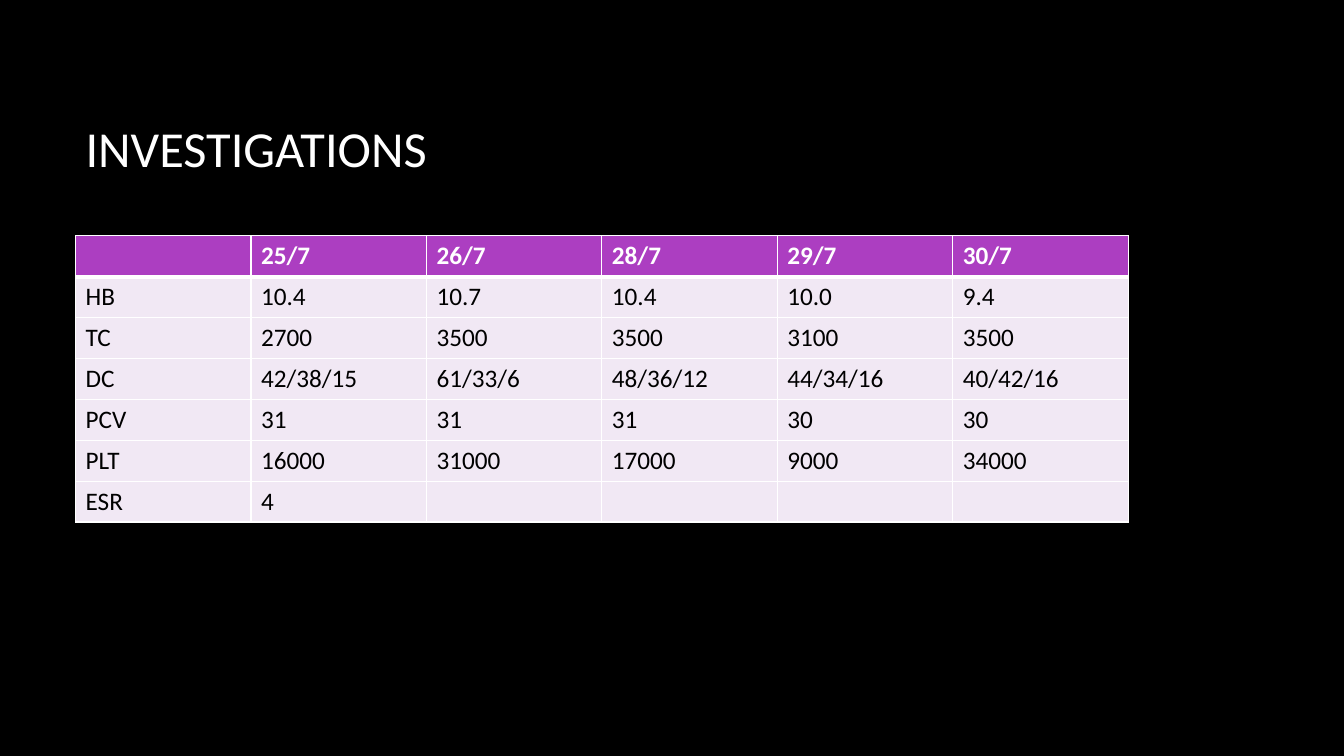
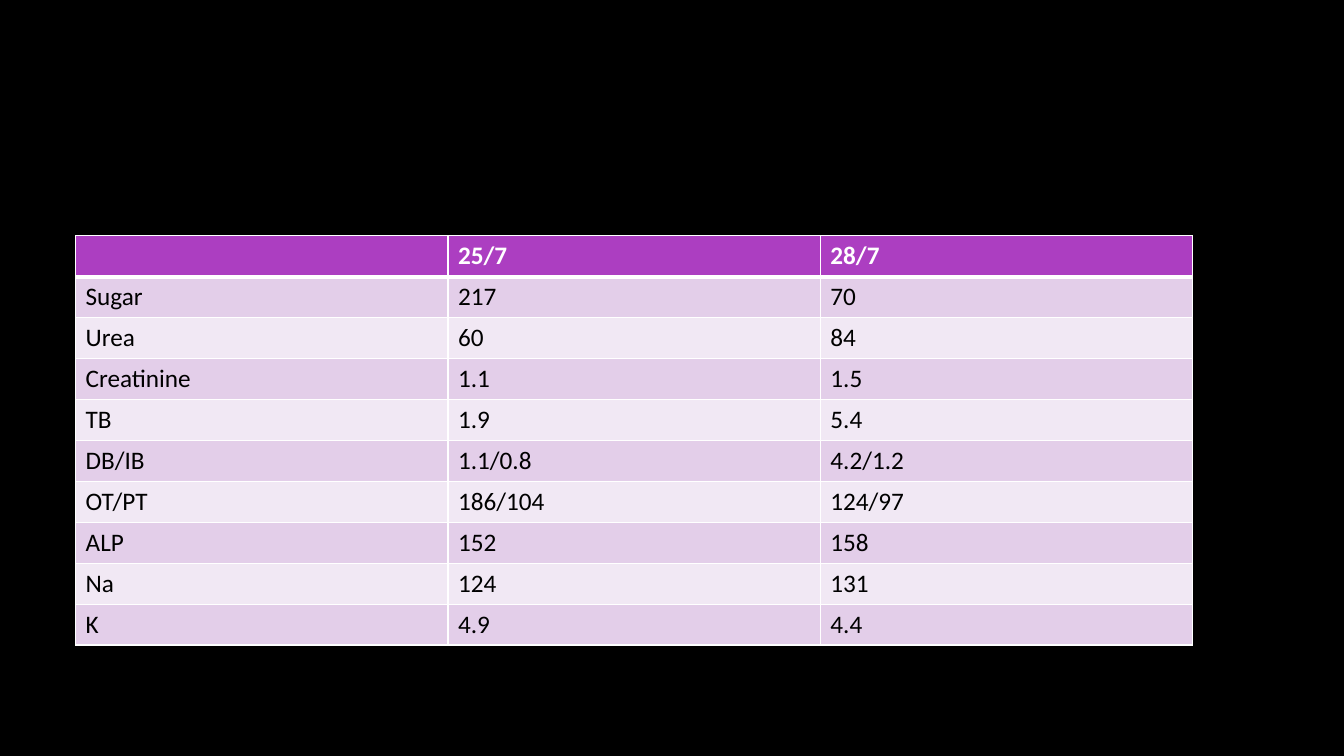
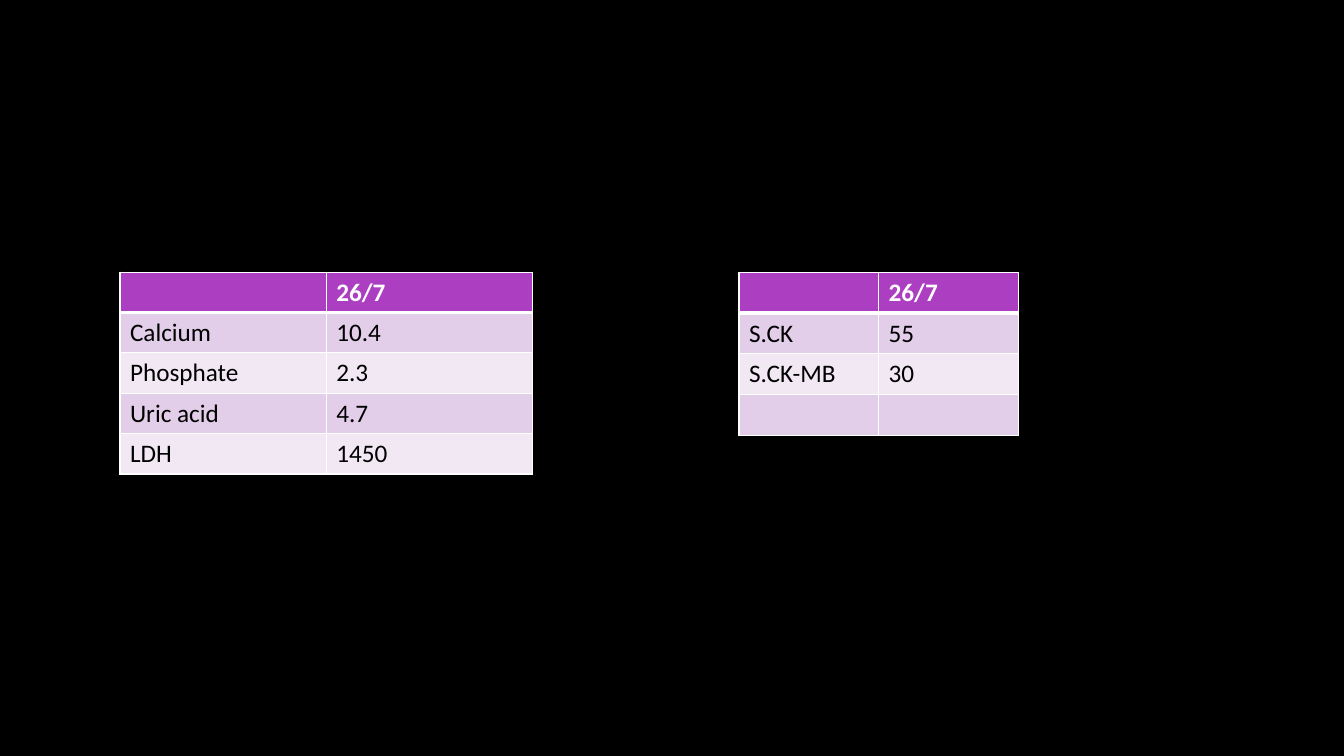
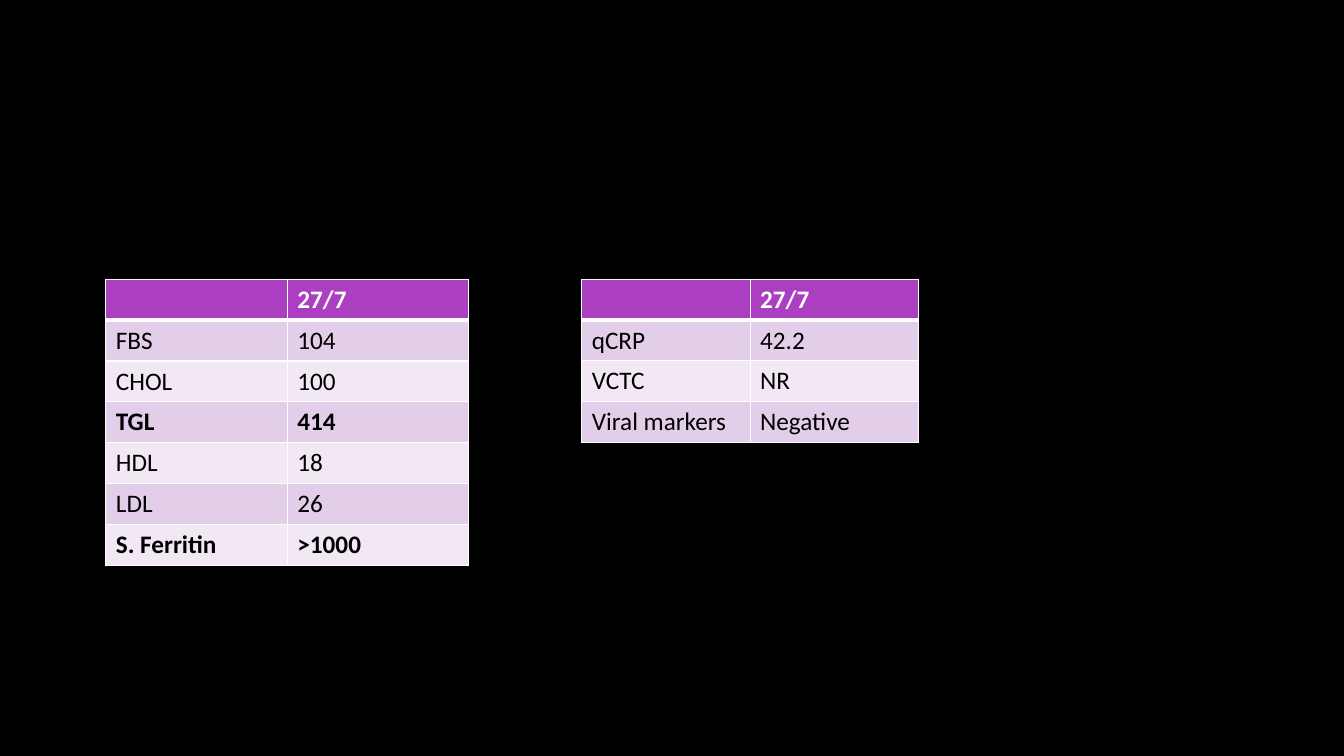
import pptx
import pptx.dml.color
import pptx.enum.text
import pptx.oxml.ns
import pptx.util
from lxml import etree

Inches = pptx.util.Inches
Pt = pptx.util.Pt

# Shared look
FONT = "Calibri"
BLACK, WHITE = "000000", "FFFFFF"
HEADER, BAND_DARK, BAND_LIGHT = "AC3EC1", "E3CEE9", "F1E8F4"

# Table contents
BLOOD_COUNT = [
    ["", "25/7", "26/7", "28/7", "29/7", "30/7"],
    ["HB", "10.4", "10.7", "10.4", "10.0", "9.4"],
    ["TC", "2700", "3500", "3500", "3100", "3500"],
    ["DC", "42/38/15", "61/33/6", "48/36/12", "44/34/16", "40/42/16"],
    ["PCV", "31", "31", "31", "30", "30"],
    ["PLT", "16000", "31000", "17000", "9000", "34000"],
    ["ESR", "4", "", "", "", ""],
]
CHEMISTRY = [
    ["", "25/7", "28/7"],
    ["Sugar", "217", "70"],
    ["Urea", "60", "84"],
    ["Creatinine", "1.1", "1.5"],
    ["TB", "1.9", "5.4"],
    ["DB/IB", "1.1/0.8", "4.2/1.2"],
    ["OT/PT", "186/104", "124/97"],
    ["ALP", "152", "158"],
    ["Na", "124", "131"],
    ["K", "4.9", "4.4"],
]
MINERALS = [
    ["", "26/7"],
    ["Calcium", "10.4"],
    ["Phosphate", "2.3"],
    ["Uric acid", "4.7"],
    ["LDH", "1450"],
]
CARDIAC = [["", "26/7"], ["S.CK", "55"], ["S.CK-MB", "30"], ["", ""]]
LIPIDS = [
    ["", "27/7"],
    ["FBS", "104"],
    ["CHOL", "100"],
    ["TGL", "414"],
    ["HDL", "18"],
    ["LDL", "26"],
    ["S. Ferritin", ">1000"],
]
MARKERS = [["", "27/7"], ["qCRP", "42.2"], ["VCTC", "NR"], ["Viral markers", "Negative"]]


def rgb(color):
    return pptx.dml.color.RGBColor.from_string(color)


def style(p, size, color, bold=False):
    p.font.name = FONT
    p.font.size = Pt(size)
    p.font.bold = bold
    p.font.color.rgb = rgb(color)


def add_slide(prs):
    slide = prs.slides.add_slide(prs.slide_layouts[6])
    fill = slide.background.fill
    fill.solid()
    fill.fore_color.rgb = rgb(BLACK)
    return slide


def add_title(slide, text):
    box = slide.shapes.add_textbox(Inches(0.75), Inches(0.67), Inches(11.08), Inches(1.59))
    tf = box.text_frame
    tf.word_wrap = True
    tf.vertical_anchor = pptx.enum.text.MSO_ANCHOR.MIDDLE
    p = tf.paragraphs[0]
    p.text = text
    style(p, 36, WHITE)


def add_borders(cell, **widths):
    """Draw white cell borders; widths in points, keyed by side."""
    qn = pptx.oxml.ns.qn
    tc_pr = cell._tc.get_or_add_tcPr()
    for side in "LRTB":
        ln = etree.SubElement(tc_pr, qn("a:ln" + side), w=str(Pt(widths.get(side, 1))))
        fill = etree.SubElement(ln, qn("a:solidFill"))
        etree.SubElement(fill, qn("a:srgbClr"), val=WHITE)


def add_table(slide, rows, left, top, width, height, banded=True, bold_rows=()):
    """Add a table with equal columns and rows under a header row."""
    frame = slide.shapes.add_table(len(rows), len(rows[0]), Inches(left), Inches(top),
                                   Inches(width), Inches(height))
    table = frame.table
    table.horz_banding = banded
    for i, row in enumerate(rows):
        header = i == 0
        if header:
            color = HEADER
        else:
            color = BAND_DARK if banded and i % 2 else BAND_LIGHT
        for j, text in enumerate(row):
            cell = table.cell(i, j)
            # Borders come before the fill in the cell properties
            add_borders(cell, T=3 if i == 1 else 1, B=3 if header else 1)
            cell.fill.solid()
            cell.fill.fore_color.rgb = rgb(color)
            p = cell.text_frame.paragraphs[0]
            if text:
                p.text = text
            style(p, 18, WHITE if header else BLACK, header or row[0] in bold_rows)


def main():
    prs = pptx.Presentation()
    prs.slide_width, prs.slide_height = Inches(13.33), Inches(7.5)

    # Blood counts
    slide = add_slide(prs)
    add_title(slide, "INVESTIGATIONS")
    add_table(slide, BLOOD_COUNT, 0.75, 2.34, 10.44, 2.84, banded=False)

    # Blood chemistry
    slide = add_slide(prs)
    add_table(slide, CHEMISTRY, 0.75, 2.34, 11.08, 4.06)

    # Minerals and cardiac enzymes
    slide = add_slide(prs)
    add_table(slide, MINERALS, 1.19, 2.7, 4.09, 2)
    add_table(slide, CARDIAC, 7.33, 2.7, 2.77, 1.62)

    # Lipids and infection markers
    slide = add_slide(prs)
    add_table(slide, LIPIDS, 1.05, 2.77, 3.6, 2.84, bold_rows=("TGL", "S. Ferritin"))
    add_table(slide, MARKERS, 5.77, 2.77, 3.34, 1.62)

    prs.save("out.pptx")


if __name__ == "__main__":
    main()
